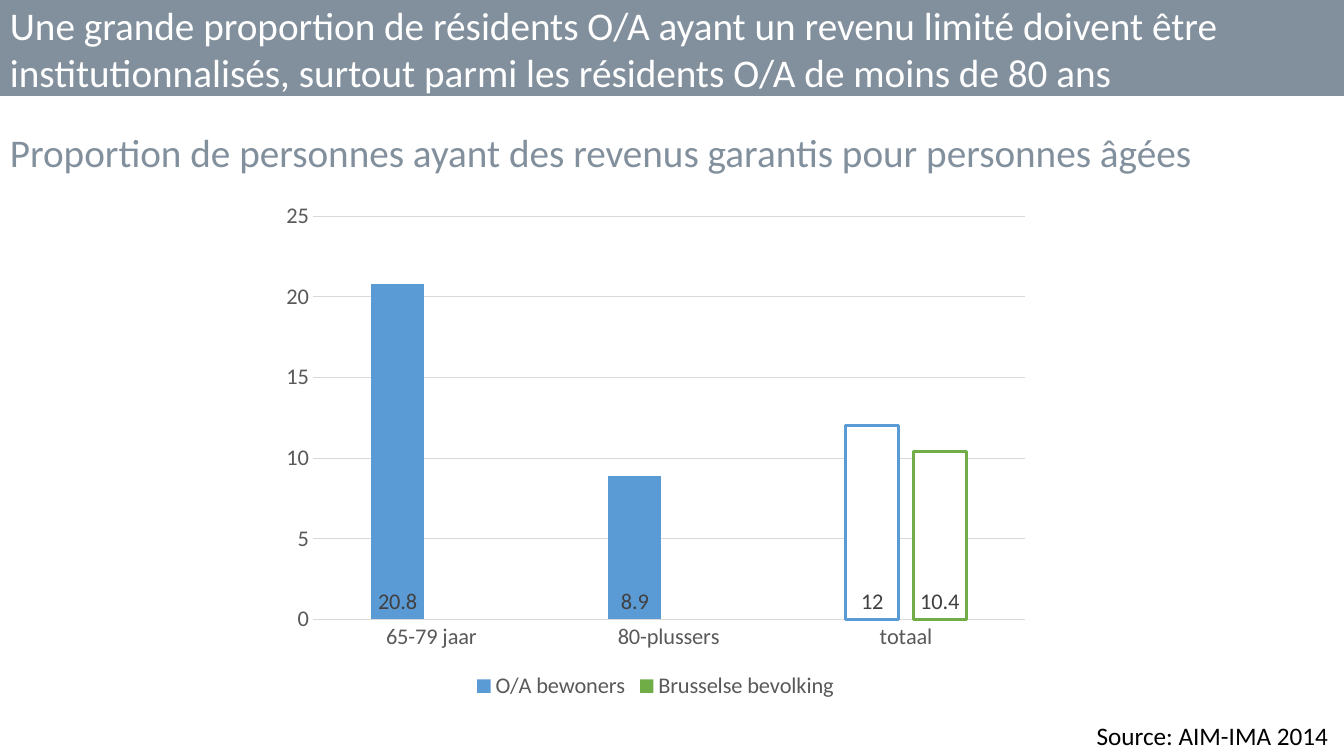
from pptx import Presentation
from pptx.chart.data import CategoryChartData
from pptx.dml.color import RGBColor
from pptx.enum.chart import (XL_CHART_TYPE as ChartType, XL_LABEL_POSITION as LabelPos,
                             XL_LEGEND_POSITION as LegendPos, XL_TICK_MARK as Tick)
from pptx.enum.shapes import MSO_SHAPE as Shape
from pptx.enum.text import MSO_AUTO_SIZE as AutoSize, PP_ALIGN as Align
from pptx.util import Cm, Pt

SLATE = RGBColor(0x82, 0x90, 0x9D)
WHITE = RGBColor(0xFF, 0xFF, 0xFF)
BLACK = RGBColor(0x00, 0x00, 0x00)
BLUE = RGBColor(0x5B, 0x9B, 0xD5)
GREEN = RGBColor(0x70, 0xAD, 0x47)
AXIS_GREY = RGBColor(0x59, 0x59, 0x59)
LABEL_GREY = RGBColor(0x40, 0x40, 0x40)
GRID_GREY = RGBColor(0xD9, 0xD9, 0xD9)

WIDTH, HEIGHT = 33.87, 19.05
TOTAL = 2  # index of the "totaal" category, drawn as outlined bars
CATEGORIES = ["65-79 jaar", "80-plussers", "totaal"]
SERIES = [
    ("O/A bewoners", [20.8, 8.9, 12], BLUE),
    ("Brusselse bevolking", [None, None, 10.4], GREEN),
]


def apply(target, values):
    for name, value in values.items():
        setattr(target, name, value)


class SlideBuilder:
    def __init__(self, slide, font="Calibri"):
        self.slide = slide
        self.font = font

    def style_font(self, font, size, color):
        apply(font, {"name": self.font, "size": Pt(size), "bold": False})
        font.color.rgb = color

    def band(self, box, color):
        sp = self.slide.shapes.add_shape(Shape.RECTANGLE, *map(Cm, box))
        sp.shadow.inherit = False
        sp.fill.solid()
        sp.fill.fore_color.rgb = color
        sp.line.fill.background()

    def text(self, box, text, size, color, align=Align.LEFT, right_inset=0.25):
        tf = self.slide.shapes.add_textbox(*map(Cm, box)).text_frame
        apply(tf, {"word_wrap": True, "auto_size": AutoSize.SHAPE_TO_FIT_TEXT,
                   "margin_right": Cm(right_inset)})
        p = tf.paragraphs[0]
        p.alignment = align
        r = p.add_run()
        r.text = text
        self.style_font(r.font, size, color)

    def column_chart(self, box, categories, series):
        data = CategoryChartData()
        data.categories = categories
        for name, values, _ in series:
            data.add_series(name, values)
        chart = self.slide.shapes.add_chart(
            ChartType.COLUMN_CLUSTERED, *map(Cm, box), data).chart
        apply(chart, {"has_title": False, "has_legend": True})
        self.style_font(chart.font, 10, BLACK)
        apply(chart.legend, {"position": LegendPos.BOTTOM, "include_in_layout": False})
        self.style_font(chart.legend.font, 16, AXIS_GREY)

        for axis in (chart.category_axis, chart.value_axis):
            apply(axis, {"major_tick_mark": Tick.NONE, "minor_tick_mark": Tick.NONE})
            self.style_font(axis.tick_labels.font, 16, AXIS_GREY)
        chart.value_axis.format.line.fill.background()
        apply(chart.value_axis, {"minimum_scale": 0, "maximum_scale": 25, "major_unit": 5})
        for line in (chart.category_axis.format.line,
                     chart.value_axis.major_gridlines.format.line):
            self.outline(line, GRID_GREY, 0.75)

        plot = chart.plots[0]
        apply(plot, {"gap_width": 219, "overlap": -27, "vary_by_categories": False})
        for bars, (_, _, color) in zip(plot.series, series):
            self.style_bars(bars, color)

    def style_bars(self, bars, color):
        bars.invert_if_negative = False
        total = bars.points[TOTAL].format
        for fill, fill_color in ((bars.format.fill, color), (total.fill, WHITE)):
            fill.solid()
            fill.fore_color.rgb = fill_color
        self.outline(total.line, color, 2.25)
        labels = bars.data_labels
        apply(labels, {"show_value": True, "position": LabelPos.INSIDE_BASE})
        self.style_font(labels.font, 16, LABEL_GREY)

    def outline(self, line, color, width):
        line.color.rgb = color
        line.width = Pt(width)


def main():
    prs = Presentation()
    apply(prs, {"slide_width": Cm(WIDTH), "slide_height": Cm(HEIGHT)})
    s = SlideBuilder(prs.slides.add_slide(prs.slide_layouts[6]))

    s.band((0, 0, WIDTH, 2.42), SLATE)
    s.text((15.56, 18.03, 18.31, 1.02), "Source: AIM-IMA 2014", 18, BLACK,
           Align.RIGHT, right_inset=0.4)
    s.text((0, 3.1, WIDTH, 1.45),
           "Proportion de personnes ayant des revenus garantis pour personnes âgées",
           28, SLATE)
    s.text((0, -0.1, WIDTH, 2.65),
           "Une grande proportion de résidents O/A ayant un revenu limité doivent être "
           "institutionnalisés, surtout parmi les résidents O/A de moins de 80 ans",
           28, WHITE)
    s.column_chart((6.83, 4.85, 19.38, 12.9), CATEGORIES, SERIES)
    prs.save("out.pptx")


if __name__ == "__main__":
    main()
